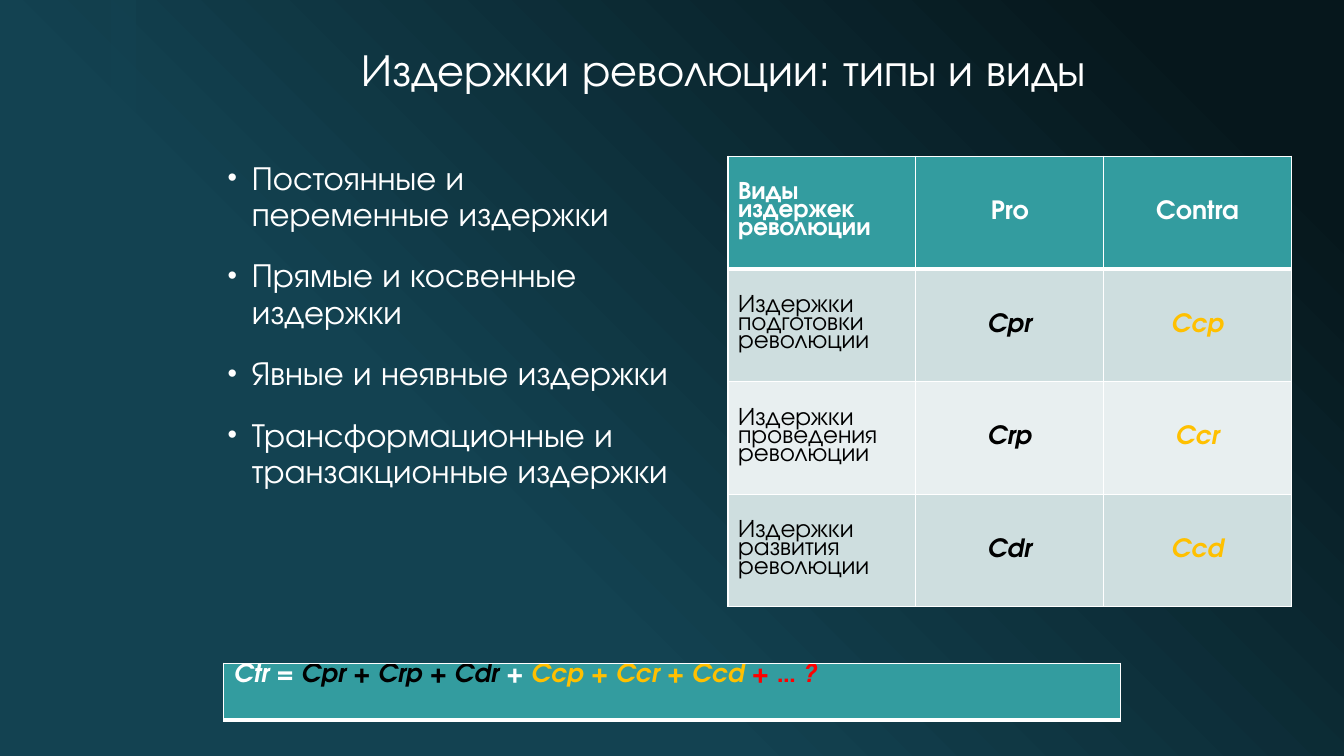
import pptx
import pptx.util
import pptx.dml.color
import pptx.enum.shapes
import pptx.enum.text
from lxml import etree

Inches, Pt = pptx.util.Inches, pptx.util.Pt
RGB = pptx.dml.color.RGBColor
ALIGN = pptx.enum.text.PP_ALIGN
ANCHOR = pptx.enum.text.MSO_ANCHOR

FONT = "TeX Gyre Adventor"
WHITE = RGB(0xFF, 0xFF, 0xFF)
BLACK = RGB(0, 0, 0)
NIGHT = RGB(0x06, 0x17, 0x1C)
DEEP = RGB(0x13, 0x42, 0x51)
TEAL = RGB(0x33, 0x9C, 0x9F)
BANDS = RGB(0xCE, 0xDE, 0xDF), RGB(0xE8, 0xEF, 0xF0)
GOLD = RGB(0xFF, 0xC0, 0x00)
RED = RGB(0xFF, 0, 0)
TIGHT = 0.77

TITLE = "Издержки революции: типы и виды"
POINTS = [
    "Постоянные и\vпеременные издержки",
    "Прямые и косвенные издержки",
    "Явные и неявные издержки",
    "Трансформационные и транзакционные издержки",
]
COSTS = [
    ("Виды издержек революции", "Pro", "Contra"),
    ("Издержки подготовки революции", "Cpr", "Ccp"),
    ("Издержки проведения революции", "Crp", "Ccr"),
    ("Издержки развития\nреволюции", "Cdr", "Ccd"),
]
TERMS = [
    ("Ctr = ", WHITE),
    ("Cpr + Crp + Cdr ", BLACK),
    ("+ ", WHITE),
    ("Ccp + Ccr + Ccd ", GOLD),
    ("+ … ?", RED),
]


def add_xml(parent, tag, **attrs):
    return etree.SubElement(parent, pptx.oxml.ns.qn(tag), attrs)


def style(run, size, color, bold=False, italic=False):
    font = run.font
    font.name, font.size = FONT, Pt(size)
    font.bold, font.italic = bold, italic
    font.color.rgb = color


def paint(cell, color, base=1):
    """Draw white borders, the lower one base points wide, then fill."""
    props = cell._tc.get_or_add_tcPr()
    for side, width in zip("LRTB", (1, 1, 1, base)):
        line = add_xml(props, "a:ln" + side, w=str(Pt(width)))
        solid = add_xml(line, "a:solidFill")
        add_xml(solid, "a:srgbClr", val=str(WHITE))
    cell.fill.solid()
    cell.fill.fore_color.rgb = color


def add_text(slide, box):
    frame = slide.shapes.add_textbox(*map(Inches, box)).text_frame
    frame.word_wrap = True
    return frame


def add_grid(slide, box, rows, cols):
    shape = slide.shapes.add_table(rows, cols, *map(Inches, box))
    return shape.table


def draw_back(slide, box):
    # Diagonal gradient
    fill = slide.background.fill
    fill.gradient()
    fill.gradient_angle = 225
    for stop, color, place in zip(fill.gradient_stops, (NIGHT, DEEP), (0.1, 0.65)):
        stop.color.rgb = color
        stop.position = place
    # Translucent strip
    kind = pptx.enum.shapes.MSO_SHAPE.RECTANGLE
    strip = slide.shapes.add_shape(kind, *map(Inches, box))
    strip.shadow.inherit = False
    strip.line.fill.background()
    strip.fill.solid()
    strip.fill.fore_color.rgb = DEEP
    tint = strip._element.spPr.find(".//" + pptx.oxml.ns.qn("a:srgbClr"))
    add_xml(tint, "a:alpha", val="60000")


def draw_title(slide, box):
    frame = add_text(slide, box)
    frame.vertical_anchor = ANCHOR.BOTTOM
    frame.text = TITLE
    para = frame.paragraphs[0]
    para.alignment, para.line_spacing = ALIGN.CENTER, 0.9
    style(para.runs[0], 32.4, WHITE)


def draw_points(slide, box):
    frame = add_text(slide, box)
    frame.text = "\n".join(POINTS)
    for num, para in enumerate(frame.paragraphs):
        para.line_spacing = 0.9
        para.space_before = Pt(18 if num else 0)
        props = para._p.get_or_add_pPr()
        props.set("marL", str(Inches(0.24)))
        props.set("indent", str(-Inches(0.24)))
        add_xml(props, "a:buSzPct", val="80000")
        add_xml(props, "a:buFont", typeface="Arial")
        add_xml(props, "a:buChar", char="•")
        for run in para.runs:
            style(run, 24, WHITE)


def draw_costs(slide, box):
    table = add_grid(slide, box, len(COSTS), len(COSTS[0]))
    for row, texts in enumerate(COSTS):
        for col, text in enumerate(texts):
            cell = table.cell(row, col)
            head = row == 0
            paint(cell, TEAL if head else BANDS[(row - 1) % 2], 3 if head else 1)
            cell.vertical_anchor = ANCHOR.MIDDLE
            cell.text_frame.text = text
            color = WHITE if head else (BLACK, BLACK, GOLD)[col]
            for para in cell.text_frame.paragraphs:
                if col:
                    para.alignment = ALIGN.CENTER
                else:
                    para.line_spacing = TIGHT
                style(para.runs[0], 18, color, head or col > 0, not head and col > 0)


def draw_sum(slide, box):
    cell = add_grid(slide, box, 1, 1).cell(0, 0)
    paint(cell, TEAL, 3)
    para = cell.text_frame.paragraphs[0]
    para.line_spacing = TIGHT
    for text, color in TERMS:
        run = para.add_run()
        run.text = text
        style(run, 18, color, True, True)


def main():
    deck = pptx.Presentation()
    deck.slide_width, deck.slide_height = Inches(13.33), Inches(7.5)
    slide = deck.slides.add_slide(deck.slide_layouts[6])
    draw_back(slide, (1.1, 0, 0.25, 7.5))
    draw_title(slide, (1.39, 0.42, 11.58, 0.58))
    draw_points(slide, (2.16, 1.55, 4.81, 5.04))
    draw_costs(slide, (7.22, 1.55, 5.59, 4.47))
    draw_sum(slide, (2.22, 6.58, 8.89, 0.56))
    deck.save("out.pptx")


if __name__ == "__main__":
    main()
